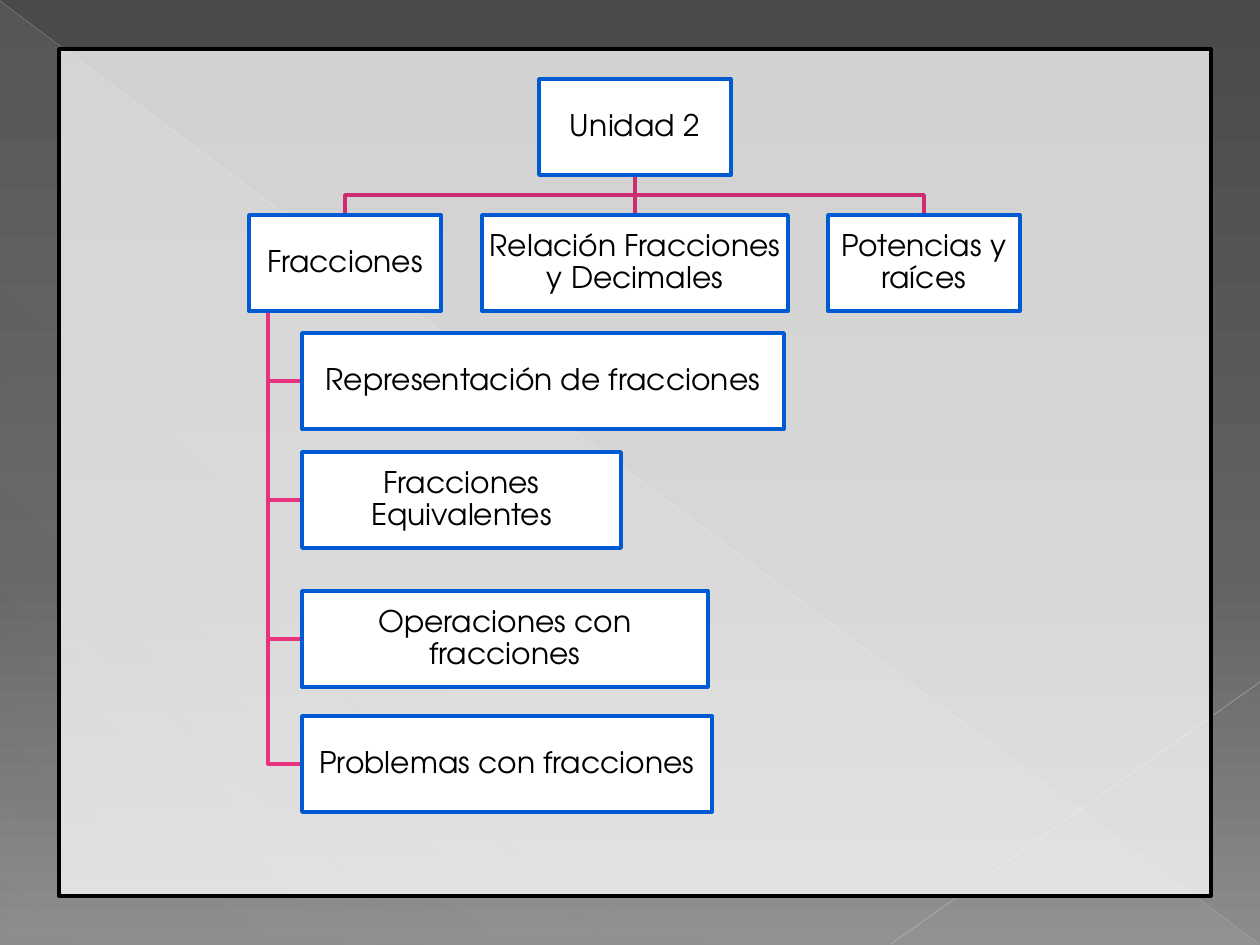
from lxml.etree import SubElement
from pptx import Presentation
from pptx.dml.color import RGBColor
from pptx.enum.shapes import MSO_CONNECTOR, MSO_SHAPE
from pptx.enum.text import MSO_ANCHOR, PP_ALIGN
from pptx.oxml.ns import qn
from pptx.util import Pt

PX = 914400 / 126
FONT = "TeX Gyre Adventor"
BLACK = RGBColor(0x00, 0x00, 0x00)
WHITE = RGBColor(0xFF, 0xFF, 0xFF)
BLUE = RGBColor(0x00, 0x5B, 0xD3)
DARK_PINK = RGBColor(0xCC, 0x2D, 0x70)
PINK = RGBColor(0xE7, 0x33, 0x7F)
DARK_GREY = RGBColor(0x4A, 0x4A, 0x4A)
MID_GREY = RGBColor(0x62, 0x62, 0x62)
GREY = RGBColor(0x8C, 0x8C, 0x8C)
PALE_GREY = RGBColor(0xD2, 0xD2, 0xD2)
LINE_GREY = RGBColor(0xBF, 0xBF, 0xBF)
LINE_PALE = RGBColor(0xC6, 0xC6, 0xC6)

BOX_W, BOX_H = 192, 96
TOPICS = [("Fracciones", 249, BOX_W),
          ("Relación Fracciones y Decimales", 482, 306),
          ("Potencias y raíces", 828, BOX_W)]
SUBTOPICS = [("Representación de fracciones", 333, 482),
             ("Fracciones Equivalentes", 452, 319),
             ("Operaciones con fracciones", 591, 406),
             ("Problemas con fracciones", 716, 410)]


def px(n):
    return round(n * PX)


def set_alpha(color_el, percent):
    SubElement(color_el, qn("a:alpha")).set("val", str(percent * 1000))


def set_gradient(fill, parent, stops, angle):
    """Stops are (position %, colour, opacity %)."""
    fill.gradient()
    grad = parent.find(".//" + qn("a:gradFill"))
    gs_list = grad.find(qn("a:gsLst"))
    for old in list(gs_list):
        gs_list.remove(old)
    for pos, color, opacity in stops:
        gs = SubElement(gs_list, qn("a:gs"))
        gs.set("pos", str(pos * 1000))
        clr = SubElement(gs, qn("a:srgbClr"))
        clr.set("val", str(color))
        set_alpha(clr, opacity)
    lin = grad.find(qn("a:lin"))
    lin.set("ang", str(angle * 60000))
    lin.set("scaled", "0")


def add_rect(s, x, y, w, h, line_color, kind=MSO_SHAPE.RECTANGLE):
    sp = s.shapes.add_shape(kind, px(x), px(y), px(w), px(h))
    sp.shadow.inherit = False
    sp.fill.solid()
    sp.fill.fore_color.rgb = WHITE
    sp.line.color.rgb = line_color
    sp.line.width = Pt(2)
    return sp


def add_line(s, x1, y1, x2, y2, color, width, opacity=100):
    c = s.shapes.add_connector(MSO_CONNECTOR.STRAIGHT,
                               px(x1), px(y1), px(x2), px(y2))
    c.line.color.rgb = color
    c.line.width = Pt(width)
    SubElement(c._element.spPr, qn("a:effectLst"))
    set_alpha(c._element.spPr.find(".//" + qn("a:srgbClr")), opacity)
    return c


def add_elbow(s, points, color):
    start, *rest = points
    builder = s.shapes.build_freeform(*start, scale=PX)
    builder.add_line_segments(rest, close=False)
    sp = builder.convert_to_shape()
    sp.shadow.inherit = False
    sp.fill.background()
    sp.line.color.rgb = color
    sp.line.width = Pt(2)


def add_box(s, text, x, y, w):
    sp = add_rect(s, x, y, w, BOX_H, BLUE)
    tf = sp.text_frame
    tf.word_wrap = True
    tf.vertical_anchor = MSO_ANCHOR.MIDDLE
    tf.margin_left = tf.margin_right = tf.margin_top = tf.margin_bottom = px(1)
    tf.text = text
    p = tf.paragraphs[0]
    p.alignment = PP_ALIGN.CENTER
    p.line_spacing = 0.9
    font = p.runs[0].font
    font.name, font.size = FONT, Pt(17)
    font.color.rgb = BLACK
    return sp


def add_backdrop(s, w, h):
    set_gradient(s.background.fill, s._element,
                 [(0, DARK_GREY, 100), (60, MID_GREY, 100), (100, GREY, 100)], 90)
    # Sheen with its two diagonal lines
    sheen = add_rect(s, 1, 2, w - 2, h - 3, WHITE, MSO_SHAPE.RIGHT_TRIANGLE)
    sheen.line.fill.background()
    set_gradient(sheen.fill, sheen._element,
                 [(0, PALE_GREY, 10), (70, PALE_GREY, 8), (100, PALE_GREY, 1)], 133)
    add_line(s, 0, 1, w - 1, h - 1, LINE_GREY, 0.39, 35)
    add_line(s, w, 682, 891, h - 1, LINE_PALE, 0.47, 45)
    # Translucent panel
    panel = add_rect(s, 59, 49, 1152, 847, BLACK)
    set_alpha(panel._element.spPr.find(qn("a:solidFill"))[0], 75)


def add_org_chart(s, x, y):
    """Draw the chart with its root box centred on x and its top at y."""
    root_bottom, topic_y = y + BOX_H, y + 136
    bar_y = root_bottom + 20
    trunk_x, sub_x = TOPICS[0][1] + 19, 302

    # Elbows behind the boxes
    for _, left, w in (TOPICS[0], TOPICS[-1]):
        mid = left + w / 2
        add_elbow(s, [(x, root_bottom), (x, bar_y), (mid, bar_y), (mid, topic_y)],
                  DARK_PINK)
    for _, top, _ in SUBTOPICS:
        mid = top + BOX_H / 2
        add_elbow(s, [(trunk_x, topic_y + BOX_H), (trunk_x, mid), (sub_x, mid)], PINK)

    # Straight link from the root to the middle topic
    link = add_line(s, x, root_bottom, x, topic_y, DARK_PINK, 2)
    root = add_box(s, "Unidad 2", x - BOX_W / 2, y, BOX_W)
    topics = [add_box(s, text, left, topic_y, w) for text, left, w in TOPICS]
    link.begin_connect(root, 2)
    link.end_connect(topics[1], 0)

    for text, top, w in SUBTOPICS:
        add_box(s, text, sub_x, top, w)


def main():
    prs = Presentation()
    prs.slide_width, prs.slide_height = px(1260), px(945)
    s = prs.slides.add_slide(prs.slide_layouts[6])
    add_backdrop(s, 1260, 945)
    add_org_chart(s, 635, 79)
    prs.save("out.pptx")


if __name__ == "__main__":
    main()
